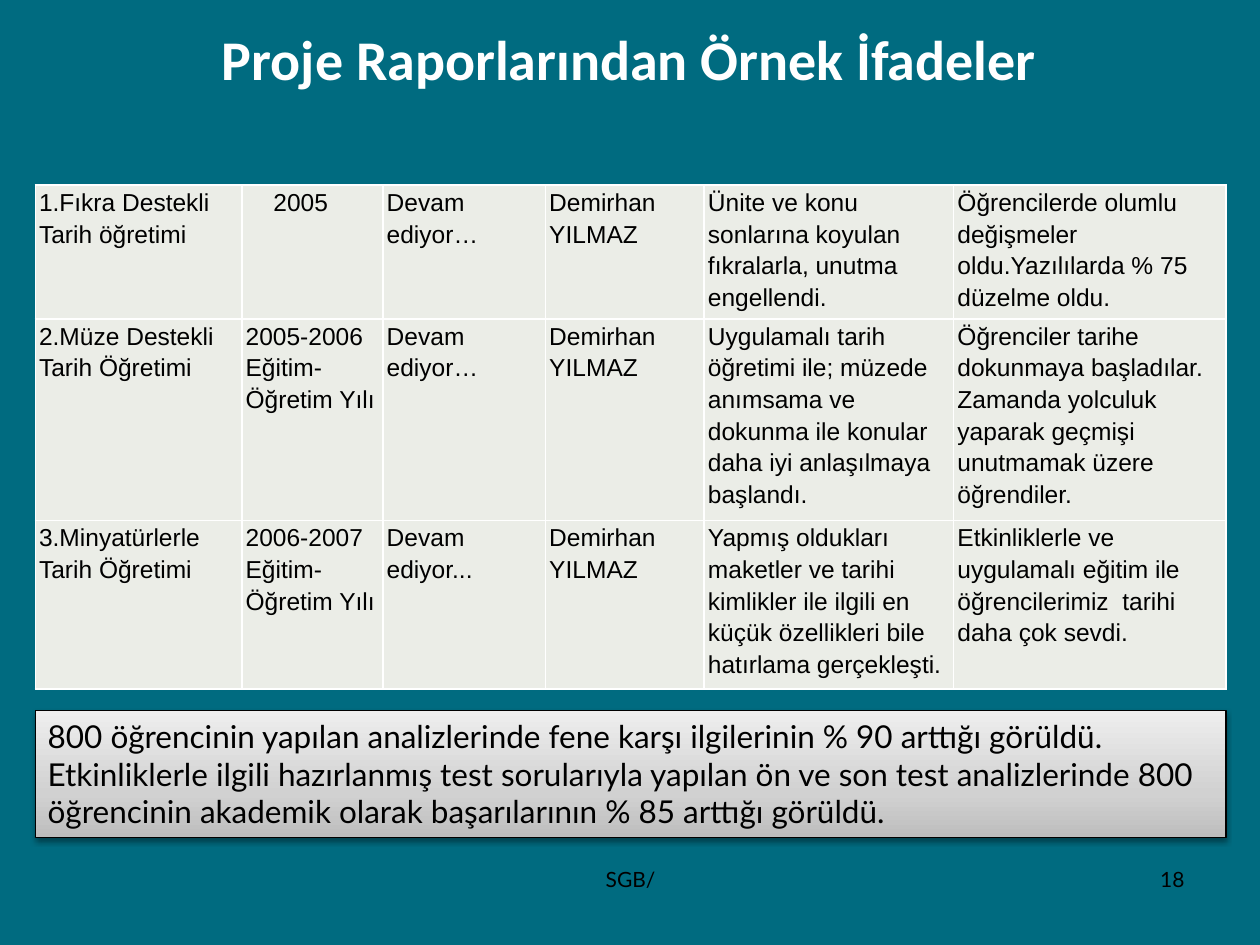
from lxml.etree import SubElement
from copy import deepcopy
from pptx import Presentation
from pptx.dml.color import RGBColor
from pptx.enum.shapes import MSO_SHAPE
from pptx.enum.text import MSO_ANCHOR, PP_ALIGN
from pptx.oxml.ns import qn
from pptx.util import Inches, Pt

TEAL = RGBColor(0x00, 0x6B, 0x80)
WHITE = RGBColor(0xFF, 0xFF, 0xFF)
BLACK = RGBColor(0x00, 0x00, 0x00)
CELL = RGBColor(0xEB, 0xED, 0xE7)
GRADIENT = [(0, RGBColor(0xBD, 0xBD, 0xBD)),
            (0.35, RGBColor(0xD1, 0xD1, 0xD1)),
            (1, RGBColor(0xEE, 0xEE, 0xEE))]

LEFT, WIDTH = 0.28, 9.45
COLS = [1.64, 1.12, 1.29, 1.26, 1.98, 2.16]
ROWS = [1.06, 1.6, 1.34]
YEAR_INDENT = 0.25

PROJECTS = [
    ["1.Fıkra Destekli Tarih öğretimi", "2005", "Devam ediyor…", "Demirhan YILMAZ",
     "Ünite ve konu sonlarına koyulan fıkralarla, unutma engellendi.",
     "Öğrencilerde olumlu değişmeler oldu.Yazılılarda % 75 düzelme oldu."],
    ["2.Müze Destekli Tarih Öğretimi", "2005-2006 Eğitim-Öğretim Yılı",
     "Devam ediyor…", "Demirhan YILMAZ",
     "Uygulamalı tarih öğretimi ile; müzede anımsama ve dokunma ile konular "
     "daha iyi anlaşılmaya başlandı.",
     "Öğrenciler tarihe dokunmaya başladılar. Zamanda yolculuk yaparak geçmişi "
     "unutmamak üzere öğrendiler."],
    ["3.Minyatürlerle Tarih Öğretimi", "2006-2007 Eğitim-Öğretim Yılı",
     "Devam ediyor...", "Demirhan YILMAZ",
     "Yapmış oldukları maketler ve tarihi kimlikler ile ilgili en küçük "
     "özellikleri bile hatırlama gerçekleşti.",
     "Etkinliklerle ve uygulamalı eğitim ile öğrencilerimiz  tarihi daha çok sevdi."],
]
SUMMARY = ("800 öğrencinin yapılan analizlerinde fene karşı ilgilerinin % 90 arttığı "
           "görüldü. Etkinliklerle ilgili hazırlanmış test sorularıyla yapılan ön ve "
           "son test analizlerinde 800 öğrencinin akademik olarak başarılarının % 85 "
           "arttığı görüldü.")


def write(tf, text, font="Lato", size=18, color=BLACK, bold=False,
          align=PP_ALIGN.LEFT, anchor=None, spacing=None, after=None):
    tf.word_wrap = True
    if anchor is not None:
        tf.vertical_anchor = anchor
    p = tf.paragraphs[0]
    p.alignment = align
    if spacing is not None:
        p.line_spacing = spacing
    if after is not None:
        p.space_after = Pt(after)
    r = p.add_run()
    r.text = text
    r.font.name, r.font.size, r.font.bold = font, Pt(size), bold
    r.font.color.rgb = color


class Deck:
    def __init__(self):
        self.prs = Presentation()
        self.prs.slide_width, self.prs.slide_height = Inches(10), Inches(7.5)
        self.s = self.prs.slides.add_slide(self.prs.slide_layouts[5])
        self.s.background.fill.solid()
        self.s.background.fill.fore_color.rgb = TEAL

    def title(self, text, x, y, w, h):
        sp = self.s.shapes.title
        sp.left, sp.top, sp.width, sp.height = map(Inches, (x, y, w, h))
        write(sp.text_frame, text, font="Calibri", size=32, color=WHITE, bold=True,
              align=PP_ALIGN.CENTER, anchor=MSO_ANCHOR.MIDDLE)

    def label(self, text, x, y, w, h, align):
        sp = self.s.shapes.add_textbox(*map(Inches, (x, y, w, h)))
        write(sp.text_frame, text, size=12, align=align)

    def table(self, data, x, y):
        frame = self.s.shapes.add_table(len(ROWS), len(COLS), Inches(x), Inches(y),
                                        Inches(sum(COLS)), Inches(sum(ROWS)))
        table = frame.table
        table.first_row = table.horz_banding = False
        for column, width in zip(table.columns, COLS):
            column.width = Inches(width)
        for row, height, texts in zip(table.rows, ROWS, data):
            row.height = Inches(height)
            for cell, text in zip(row.cells, texts):
                self.cell(cell, text)
        # The single year is set in from the cell edge
        table.cell(0, 1).margin_left = Inches(YEAR_INDENT)

    def cell(self, cell, text):
        cell.margin_left = cell.margin_right = Inches(0.03)
        cell.margin_top = cell.margin_bottom = 0
        tcPr = cell._tc.get_or_add_tcPr()
        for side in ("a:lnL", "a:lnR", "a:lnT", "a:lnB"):
            ln = SubElement(tcPr, qn(side), w=str(Pt(1)))
            fill = SubElement(ln, qn("a:solidFill"))
            SubElement(fill, qn("a:srgbClr"), val=str(WHITE))
        cell.fill.solid()
        cell.fill.fore_color.rgb = CELL
        write(cell.text_frame, text, font="Arial", size=14, spacing=1.15, after=10)

    def panel(self, text, x, y, w, h):
        sp = self.s.shapes.add_shape(MSO_SHAPE.RECTANGLE, *map(Inches, (x, y, w, h)))
        # Gradient, lightest at the top
        sp.fill.gradient()
        sp.fill.gradient_angle = 90
        gs = sp._element.spPr.find(".//" + qn("a:gs"))
        gs.addnext(deepcopy(gs))
        for stop, (position, color) in zip(sp.fill.gradient_stops, GRADIENT):
            stop.position = position
            stop.color.rgb = color
        sp.line.color.rgb = BLACK
        sp.line.width = Pt(0.75)
        # Soft shadow below
        sp.shadow.inherit = False
        effects = sp._element.spPr.find(qn("a:effectLst"))
        shadow = SubElement(effects, qn("a:outerShdw"), blurRad=str(Pt(3.1)),
                            dist=str(Pt(1.6)), dir="5400000", rotWithShape="0")
        color = SubElement(shadow, qn("a:srgbClr"), val=str(BLACK))
        SubElement(color, qn("a:alpha"), val="38000")
        write(sp.text_frame, text, anchor=MSO_ANCHOR.TOP)


def main():
    deck = Deck()
    deck.title("Proje Raporlarından Örnek İfadeler", 1.06, 0, 7.87, 0.92)
    deck.table(PROJECTS, LEFT, 1.47)
    # Footer
    deck.label("SGB/", 3.42, 6.83, 3.17, 0.52, PP_ALIGN.CENTER)
    deck.label("18", 7.17, 6.83, 2.33, 0.52, PP_ALIGN.RIGHT)
    # Summary of results
    deck.panel(SUMMARY, LEFT, 5.64, WIDTH, 1.01)
    deck.prs.save("out.pptx")


if __name__ == "__main__":
    main()
